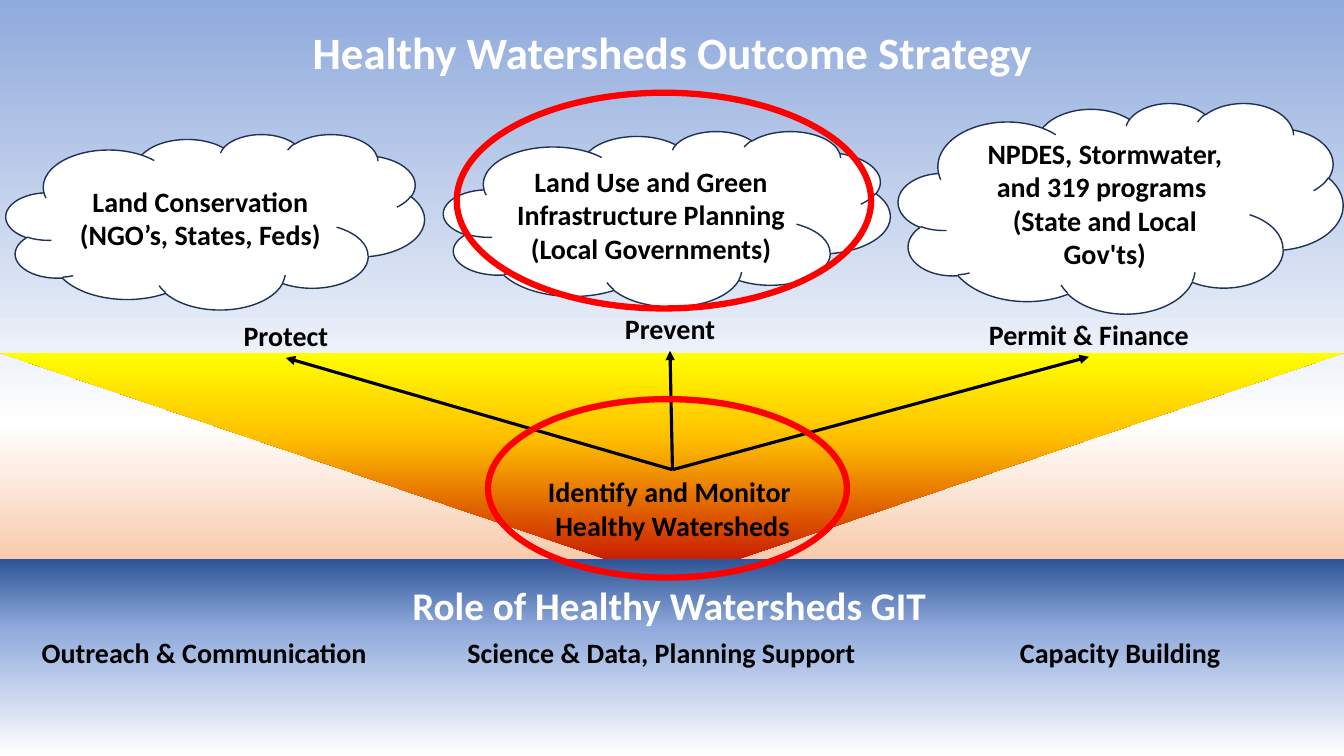
from lxml.etree import SubElement
from pptx import Presentation
from pptx.dml.color import RGBColor
from pptx.enum.shapes import MSO_CONNECTOR, MSO_SHAPE
from pptx.enum.text import MSO_ANCHOR, MSO_AUTO_SIZE, PP_ALIGN
from pptx.oxml.ns import qn
from pptx.util import Inches, Pt

COLORS = {
    "white": "FFFFFF",
    "black": "000000",
    "sky": "8FAADC",
    "navy": "2F5597",
    "outline": "1E3256",
    "orange": "ED7D31",
    "crimson": "C00000",
    "gold": "FFC000",
    "yellow": "FFFF00",
    "red": "FF0000",
}


def set_gradient(fill, element, stops):
    fill.gradient()
    fill.gradient_angle = 270
    stop_list = element.xpath(".//a:gsLst")[0]
    for stop in list(stop_list):
        stop_list.remove(stop)
    for percent, color in stops:
        stop = SubElement(stop_list, qn("a:gs"), pos=str(percent * 1000))
        SubElement(stop, qn("a:srgbClr"), val=COLORS[color])


def write_text(box, text, size=20, color="black", wrap=True):
    frame = box.text_frame
    frame.text = text
    frame.word_wrap = wrap
    for para in frame.paragraphs:
        para.alignment = PP_ALIGN.CENTER
        for span in para.runs:
            span.font.name = "Calibri"
            span.font.size = Pt(size)
            span.font.bold = True
            span.font.color.rgb = RGBColor.from_string(COLORS[color])


deck = Presentation()
deck.slide_width = Inches(13.33)
deck.slide_height = Inches(7.5)
page = deck.slides.add_slide(deck.slide_layouts[5])
set_gradient(page.background.fill, page.background._cSld,
             [(0, "sky"), (56, "white"), (100, "orange")])

title = page.shapes.title
title.left, title.top = Inches(2.97), Inches(0.19)
title.width, title.height = Inches(7.4), Inches(0.64)
write_text(title, "Healthy Watersheds Outcome Strategy", 32, "white", False)

bands = [
    (MSO_SHAPE.ISOSCELES_TRIANGLE, 3.5, 2.27, 180,
     [(0, "crimson"), (63, "gold"), (100, "yellow")]),
    (MSO_SHAPE.RECTANGLE, 5.55, 1.95, 0,
     [(0, "navy"), (35, "sky"), (100, "white")]),
]
for preset, top, height, rotation, stops in bands:
    band = page.shapes.add_shape(preset, 0, Inches(top), deck.slide_width, Inches(height))
    band.rotation = rotation
    band.shadow.inherit = False
    band.line.fill.background()
    set_gradient(band.fill, band._element, stops)

clouds = [
    (8.91, 1.02, 4.41, 2.09, "NPDES, Stormwater, and 319 programs \n(State and Local Gov'ts)"),
    (4.4, 1.3, 4.43, 1.74, "Land Use and Green Infrastructure Planning\n(Local Governments)"),
    (0.06, 1.33, 4.15, 1.74, "Land Conservation\n(NGO’s, States, Feds)"),
]
for left, top, width, height, text in clouds:
    cloud = page.shapes.add_shape(MSO_SHAPE.CLOUD, Inches(left), Inches(top),
                                  Inches(width), Inches(height))
    cloud.shadow.inherit = False
    cloud.fill.solid()
    cloud.fill.fore_color.rgb = RGBColor.from_string(COLORS["white"])
    cloud.line.color.rgb = RGBColor.from_string(COLORS["outline"])
    cloud.line.width = Pt(1)
    cloud.text_frame.vertical_anchor = MSO_ANCHOR.MIDDLE
    write_text(cloud, text)

labels = [
    (2.31, 3.11, 1.05, 0.44, "Protect", 20, "black"),
    (6.09, 3.04, 1.11, 0.44, "Prevent", 20, "black"),
    (9.7, 3.1, 2.2, 0.44, "Permit & Finance", 20, "black"),
    (5.32, 4.66, 2.7, 0.77, "Identify and Monitor \nHealthy Watersheds", 20, "black"),
    (3.96, 5.72, 5.35, 0.57, "Role of Healthy Watersheds GIT", 28, "white"),
    (0.3, 6.26, 3.45, 0.44, "Outreach & Communication", 20, "black"),
    (4.52, 6.26, 4.08, 0.44, "Science & Data, Planning Support", 20, "black"),
    (9.35, 6.26, 3.52, 0.44, "Capacity Building", 20, "black"),
]
boxes = []
for left, top, width, height, text, size, color in labels:
    box = page.shapes.add_textbox(Inches(left), Inches(top), Inches(width), Inches(height))
    write_text(box, text, size, color, False)
    box.text_frame.auto_size = MSO_AUTO_SIZE.SHAPE_TO_FIT_TEXT
    boxes.append(box)

goals, identify = boxes[:3], boxes[3]
for goal in goals:
    arrow = page.shapes.add_connector(MSO_CONNECTOR.STRAIGHT, 0, 0, 0, 0)
    arrow.begin_connect(identify, 0)
    arrow.end_connect(goal, 2)
    arrow.line.color.rgb = RGBColor.from_string(COLORS["black"])
    arrow.line.width = Pt(2.25)
    SubElement(arrow.line._get_or_add_ln(), qn("a:tailEnd"), type="triangle")
    SubElement(arrow._element.spPr, qn("a:effectLst"))

for left, top, width, height in [(4.53, 0.92, 4.11, 2.14), (4.84, 3.96, 3.56, 1.77)]:
    ring = page.shapes.add_shape(MSO_SHAPE.OVAL, Inches(left), Inches(top),
                                 Inches(width), Inches(height))
    ring.shadow.inherit = False
    ring.fill.background()
    ring.line.color.rgb = RGBColor.from_string(COLORS["red"])
    ring.line.width = Pt(4.5)

deck.save("out.pptx")
